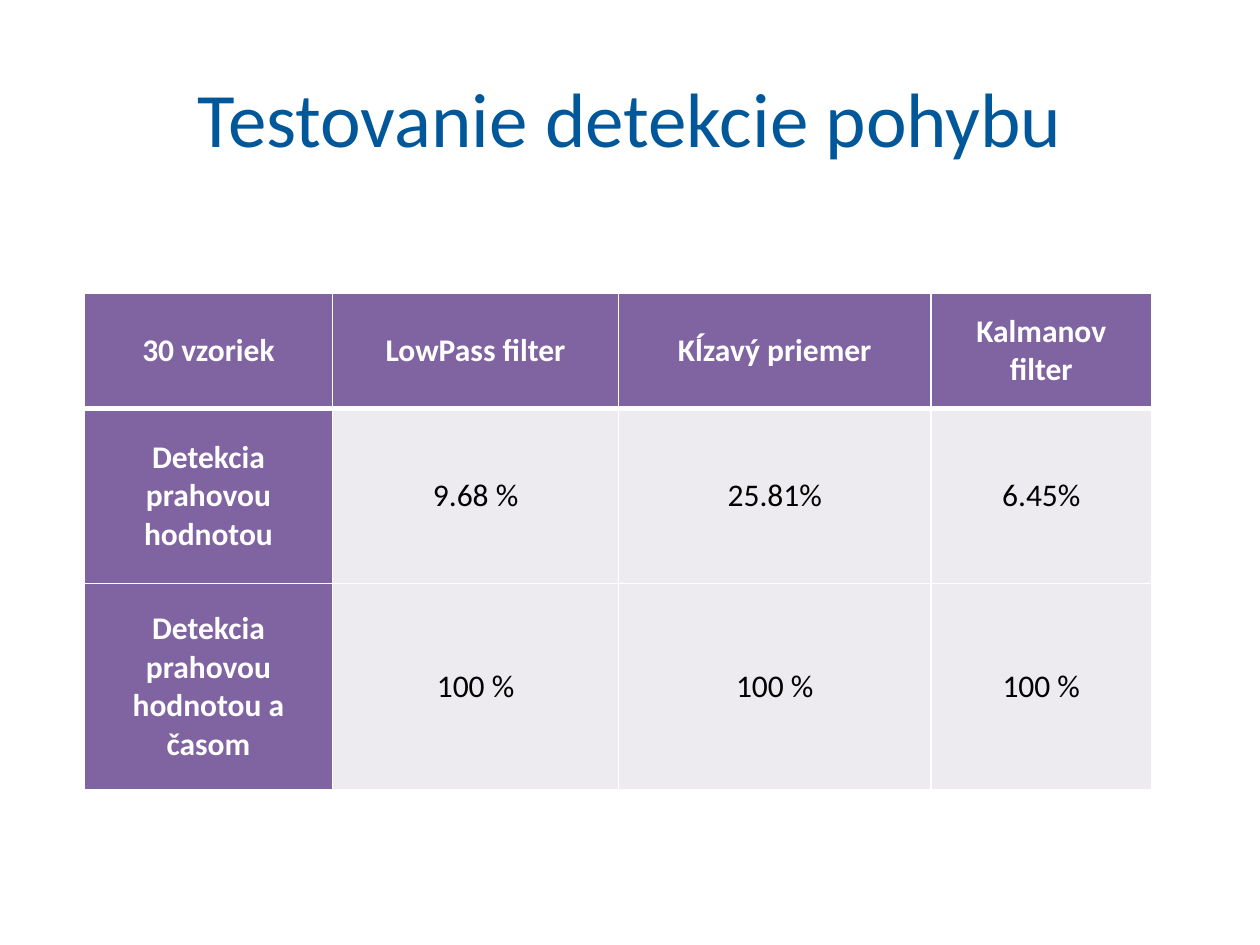
"""Build a slide with a table of motion detection test results."""
from lxml import etree
from pptx import Presentation
from pptx import util as u
from pptx.dml.color import RGBColor
from pptx.enum import text
from pptx.oxml.ns import qn

COLORS = {"title": "00589A", "header": "8064A2", "body": "EDEAF0",
          "light": "FFFFFF", "dark": "000000"}
FONT = "Calibri"
COLUMN_WIDTHS = [1.97, 2.27, 2.48, 1.75]
ROW_HEIGHTS = [0.91, 1.39, 1.64]
RESULTS = [
    ["30 vzoriek", "LowPass filter", "Kĺzavý priemer", "Kalmanov filter"],
    ["Detekcia prahovou hodnotou", "9.68 %", "25.81%", "6.45%"],
    ["Detekcia prahovou hodnotou a časom", "100 %", "100 %", "100 %"],
]


def write_text(text_frame, content, size, color, bold=False):
    text_frame.text = content
    text_frame.word_wrap = True
    paragraph = text_frame.paragraphs[0]
    paragraph.alignment = text.PP_ALIGN.CENTER
    font = paragraph.runs[0].font
    font.name, font.size, font.bold = FONT, u.Pt(size), bold
    font.color.rgb = RGBColor.from_string(COLORS[color])


def add_title(slide, content):
    box = slide.shapes.add_textbox(u.Inches(0.5), u.Inches(0.3), u.Inches(9), u.Inches(1.25))
    write_text(box.text_frame, content, 44, "title")
    box.text_frame.vertical_anchor = text.MSO_ANCHOR.MIDDLE


def add_border(cell, side, points):
    properties = cell._tc.get_or_add_tcPr()
    line = etree.SubElement(properties, qn(f"a:{side}"), w=str(u.Pt(points)))
    fill = etree.SubElement(line, qn("a:solidFill"))
    etree.SubElement(fill, qn("a:srgbClr"), val=COLORS["light"])


def format_cell(cell, content, row, column):
    is_header = row == 0 or column == 0
    write_text(cell.text_frame, content, 18, "light" if is_header else "dark", is_header)
    cell.vertical_anchor = text.MSO_ANCHOR.MIDDLE
    widths = {"lnL": 1, "lnR": 1, "lnT": 3 if row == 1 else 1, "lnB": 3 if row == 0 else 1}
    for side, points in widths.items():
        add_border(cell, side, points)
    cell.fill.solid()
    cell.fill.fore_color.rgb = RGBColor.from_string(COLORS["header" if is_header else "body"])


def add_results_table(slide):
    table = slide.shapes.add_table(
        len(ROW_HEIGHTS), len(COLUMN_WIDTHS), u.Inches(0.67), u.Inches(2.33),
        u.Inches(sum(COLUMN_WIDTHS)), u.Inches(sum(ROW_HEIGHTS))).table
    table.first_col = True
    table.horz_banding = False
    for column, width in zip(table.columns, COLUMN_WIDTHS):
        column.width = u.Inches(width)
    for row, height in zip(table.rows, ROW_HEIGHTS):
        row.height = u.Inches(height)
    for row, values in enumerate(RESULTS):
        for column, value in enumerate(values):
            format_cell(table.cell(row, column), value, row, column)


def main():
    presentation = Presentation()
    presentation.slide_width, presentation.slide_height = u.Inches(10), u.Inches(7.5)
    slide = presentation.slides.add_slide(presentation.slide_layouts[6])
    add_title(slide, "Testovanie detekcie pohybu")
    add_results_table(slide)
    presentation.save("out.pptx")


if __name__ == "__main__":
    main()
